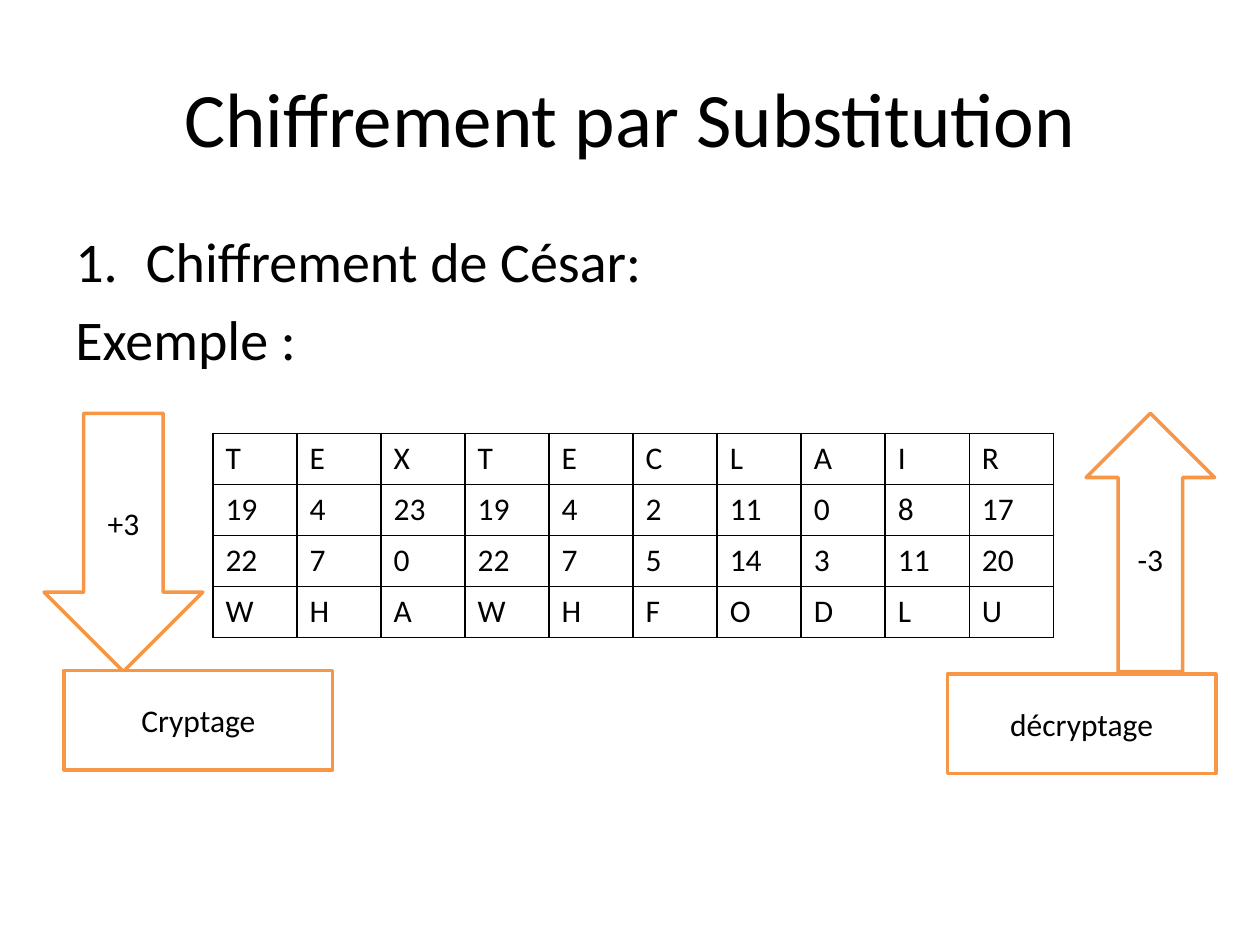
from lxml import etree
from pptx import Presentation
from pptx import util as u
from pptx.dml.color import RGBColor
from pptx.enum import shapes, text
from pptx.oxml import ns

BLACK, WHITE, ORANGE = "000000", "FFFFFF", "F79646"
SHAPE, ALIGN, ANCHOR = shapes.MSO_SHAPE, text.PP_ALIGN, text.MSO_ANCHOR
KEY = 3


def color(code):
    return RGBColor.from_string(code)


def box(*sides):
    return [u.Inches(side) for side in sides]


class Page:
    font = {"name": "Calibri", "bold": False}

    def __init__(self, slide):
        self.slide = slide

    def style(self, para, words, size, **form):
        para.text = words
        for name, value in form.items():
            setattr(para, name, value)
        for name, value in {**self.font, "size": u.Pt(size)}.items():
            setattr(para.font, name, value)
        para.font.color.rgb = color(BLACK)

    def label(self, place, lines, size, anchor=ANCHOR.TOP, indent=0, **form):
        frame = self.slide.shapes.add_textbox(*box(*place)).text_frame
        frame.word_wrap = True
        frame.vertical_anchor = anchor
        for row, words in enumerate(lines):
            para = frame.add_paragraph() if row else frame.paragraphs[0]
            if row:
                para.space_before = u.Pt(6)
            elif indent:
                self.number(para, indent)
            self.style(para, words, size, **form)

    def number(self, para, indent):
        props = para._p.get_or_add_pPr()
        props.set("marL", str(u.Inches(indent)))
        props.set("indent", str(-u.Inches(indent)))
        etree.SubElement(props, ns.qn("a:buFont"), typeface="+mj-lt")
        etree.SubElement(props, ns.qn("a:buAutoNum"), type="arabicPeriod")

    def shape(self, kind, place, words):
        item = self.slide.shapes.add_shape(kind, *box(*place))
        item.shadow.inherit = False
        item.fill.solid()
        item.fill.fore_color.rgb = color(WHITE)
        item.line.color.rgb = color(ORANGE)
        item.line.width = u.Pt(2)
        item.text_frame.vertical_anchor = ANCHOR.MIDDLE
        self.style(item.text_frame.paragraphs[0], words, 18, alignment=ALIGN.CENTER)

    def border(self, cell):
        props = cell._tc.get_or_add_tcPr()
        for spot, side in enumerate(("lnL", "lnR", "lnT", "lnB")):
            line = etree.Element(ns.qn("a:" + side), w=str(u.Pt(1)))
            fill = etree.SubElement(line, ns.qn("a:solidFill"))
            etree.SubElement(fill, ns.qn("a:srgbClr"), val=BLACK)
            props.insert(spot, line)

    def table(self, place, rows):
        grid = self.slide.shapes.add_table(len(rows), len(rows[0]), *box(*place)).table
        grid.first_row = grid.horz_banding = False
        for r, row in enumerate(rows):
            for c, value in enumerate(row):
                cell = grid.cell(r, c)
                cell.fill.background()
                self.border(cell)
                self.style(cell.text_frame.paragraphs[0], str(value), 18)


def main():
    deck = Presentation()
    deck.slide_width, deck.slide_height = box(10, 7.5)
    page = Page(deck.slides.add_slide(deck.slide_layouts[6]))

    # Title and introduction
    page.label((0.5, 0.3, 9, 1.25), ["Chiffrement par Substitution"], 44,
               ANCHOR.MIDDLE, alignment=ALIGN.CENTER)
    page.label((0.5, 1.75, 9, 4.95), ["Chiffrement de César:", "Exemple :"], 32,
               indent=0.56)

    # Caesar table: letters, ranks, shifted ranks, cipher letters
    plain = "TEXTECLAIR"
    ranks = [ord(sign) - ord("A") for sign in plain]
    moved = [(rank + KEY) % 26 for rank in ranks]
    cipher = [chr(rank + ord("A")) for rank in moved]
    page.table((1.69, 3.44, 6.67, 1.62), [plain, ranks, moved, cipher])

    # Arrows and their captions
    page.shape(SHAPE.DOWN_ARROW, (0.35, 3.28, 1.26, 2.05), f"+{KEY}")
    page.shape(SHAPE.UP_ARROW, (8.62, 3.28, 1.02, 2.05), f"-{KEY}")
    page.shape(SHAPE.RECTANGLE, (0.51, 5.32, 2.13, 0.79), "Cryptage")
    page.shape(SHAPE.RECTANGLE, (7.52, 5.35, 2.13, 0.79), "décryptage")

    deck.save("out.pptx")


if __name__ == "__main__":
    main()
